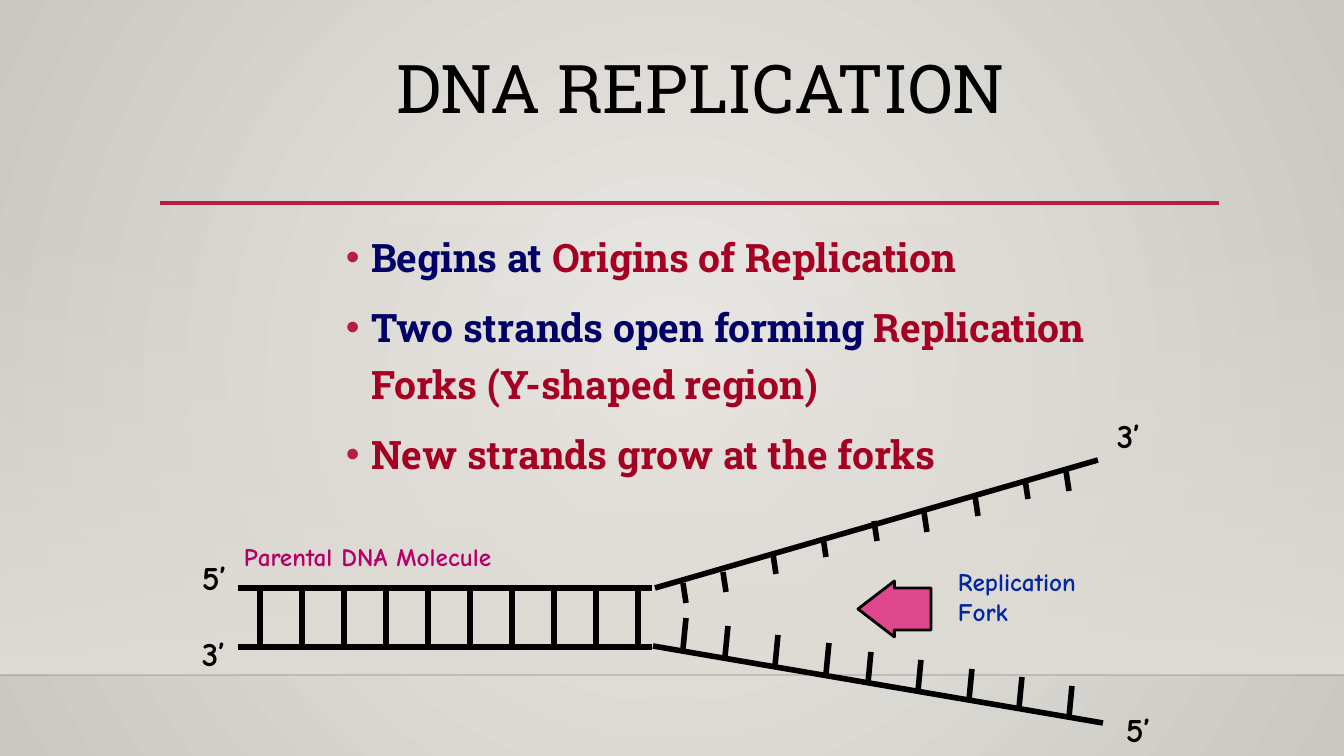
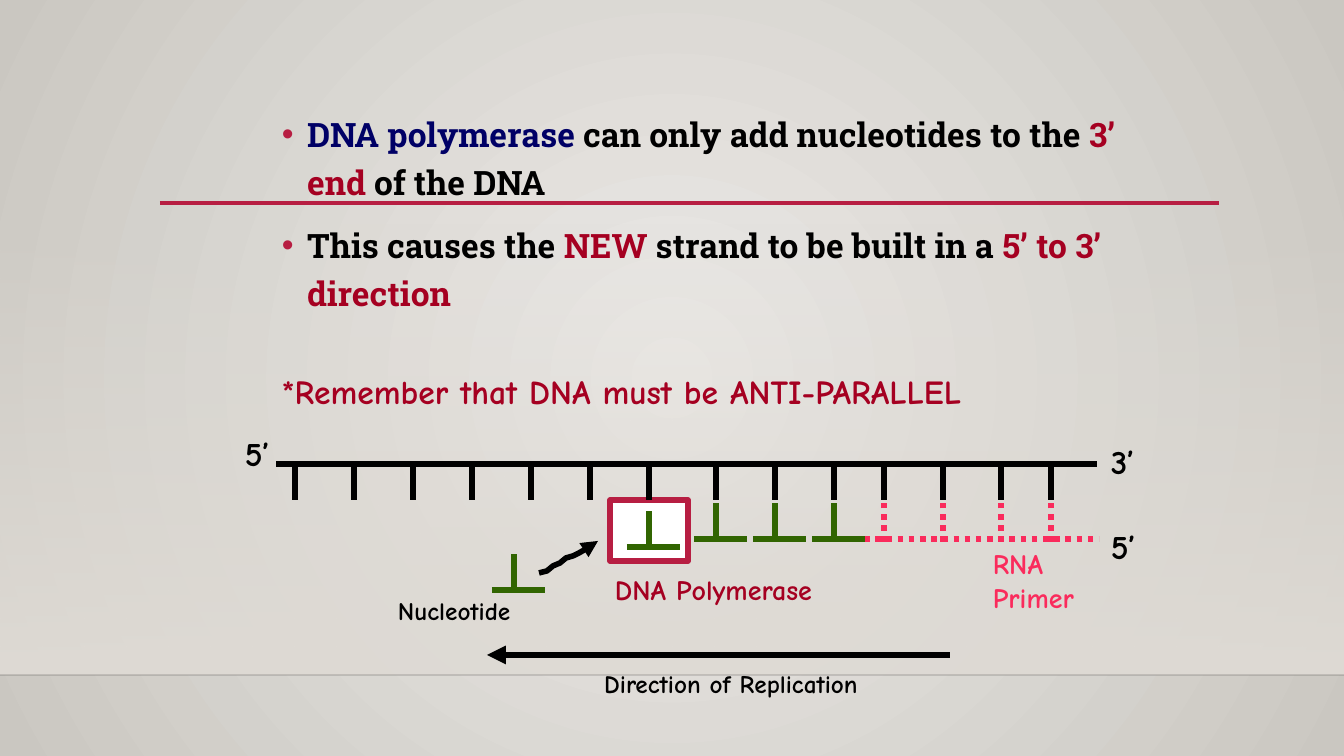
import pptx
import pptx.util
import pptx.oxml
import pptx.oxml.ns
import pptx.dml.color
import pptx.enum.dml
import pptx.enum.shapes
import pptx.enum.text
from lxml import etree

PX = 914400 / 100.8
WIDTH, HEIGHT = 1344, 756
SLAB, COMIC = "Roboto Slab", "Comic Neue"
COLORS = {
    "center": "ECEAE7", "edge": "CAC7C1", "floor": "DFDBD5", "horizon": "000001",
    "accent": "B71E42", "black": "000000", "white": "FFFFFF", "navy": "000066",
    "red": "A50021", "blue": "00279F", "magenta": "B50069", "pink": "DE478E",
    "primer": "FA2B5C", "green": "316501",
}
RGB = {name: pptx.dml.color.RGBColor.from_string(value) for name, value in COLORS.items()}
qn = pptx.oxml.ns.qn
Shape = pptx.enum.shapes.MSO_SHAPE
Align = pptx.enum.text.PP_ALIGN


def add_text(page, place, rows, box=None, font=COMIC, size=24, color="black", bold=True,
             wrap=False, bullet=False, before=0, spacing=1.0, align=Align.LEFT):
    place = [round(value * PX) for value in place]
    box = box or page.shapes.add_textbox(*place)
    box.left, box.top, box.width, box.height = place
    frame = box.text_frame
    frame.word_wrap = wrap
    frame.vertical_anchor = pptx.enum.text.MSO_ANCHOR.TOP
    for row in rows:
        first = not frame.text
        para = frame.paragraphs[0] if first else frame.add_paragraph()
        para.alignment = align
        para.line_spacing = spacing
        para.space_before = pptx.util.Pt(0 if first else before)
        if bullet:
            props = para._p.get_or_add_pPr()
            props.set("marL", "228600")
            props.set("indent", "-228600")
            tint = etree.SubElement(props, qn("a:buClr"))
            etree.SubElement(tint, qn("a:srgbClr"), val=COLORS["accent"])
            etree.SubElement(props, qn("a:buFont"), typeface="Arial")
            etree.SubElement(props, qn("a:buChar"), char="•")
        for text, tone in [(row, color)] if isinstance(row, str) else row:
            span = para.add_run()
            span.text = text
            span.font.name = font
            span.font.size = pptx.util.Pt(size)
            span.font.bold = bold
            span.font.color.rgb = RGB[tone]
    return box


def add_line(page, *points, color="black", width=4, dotted=False, arrow=False):
    if len(points) == 2:
        ends = [round(value * PX) for point in points for value in point]
        line = page.shapes.add_connector(pptx.enum.shapes.MSO_CONNECTOR.STRAIGHT, *ends)
    else:
        builder = page.shapes.build_freeform(*points[0], scale=PX)
        builder.add_line_segments(points[1:], close=False)
        line = builder.convert_to_shape()
        line.fill.background()
    line.line.color.rgb = RGB[color]
    line.line.width = pptx.util.Pt(width)
    if dotted:
        line.line.dash_style = pptx.enum.dml.MSO_LINE.ROUND_DOT
    props = line.element.spPr
    if arrow:
        etree.SubElement(props.find(qn("a:ln")), qn("a:tailEnd"), type="triangle")
    etree.SubElement(props, qn("a:effectLst"))
    return line


deck = pptx.Presentation()
deck.slide_width = round(WIDTH * PX)
deck.slide_height = round(HEIGHT * PX)
fork_page = deck.slides.add_slide(deck.slide_layouts[5])
strand_page = deck.slides.add_slide(deck.slide_layouts[6])

master = deck.slide_master
backdrop = master.background.fill
backdrop.gradient()
for stop, name in zip(backdrop.gradient_stops, ("center", "edge")):
    stop.color.rgb = RGB[name]
gradient = master.element.find(".//" + qn("a:gradFill"))
gradient.replace(gradient.find(qn("a:lin")), pptx.oxml.parse_xml(
    f'<a:path {pptx.oxml.ns.nsdecls("a")} path="circle">'
    '<a:fillToRect l="50000" t="50000" r="50000" b="50000"/></a:path>'))

floor = fork_page.shapes.add_shape(
    Shape.RECTANGLE, 0, round(223 * PX), deck.slide_width, round(452 * PX))
floor.shadow.inherit = False
floor.line.fill.background()
floor.fill.gradient()
floor.fill.gradient_angle = 270
for stop in floor.fill.gradient_stops:
    stop.color.rgb = RGB["floor"]
horizon = add_line(fork_page, (0, 675), (WIDTH, 675), color="horizon", width=1)
rule = add_line(fork_page, (160, 203), (1219, 203), color="accent", width=2.5)
for shape, opacity in ((floor, "0"), (horizon, "20000")):
    tint = shape.element.spPr.find(".//" + qn("a:srgbClr"))
    etree.SubElement(tint, qn("a:alpha"), val=opacity)
for number, shape in enumerate((floor, horizon, rule), 20):
    shape.element.find(".//" + qn("p:cNvPr")).set("id", str(number))
    master.shapes.element.append(shape.element)

add_text(fork_page, (386, 50, 714, 143), ["DNA REPLICATION"], box=fork_page.shapes.title,
         font=SLAB, size=48, bold=False, wrap=True, spacing=0.9)
add_text(fork_page, (336, 219, 789, 454), [
    [("Begins at ", "navy"), ("Origins of Replication", "red")],
    [("Two strands open forming ", "navy"), ("Replication Forks (Y-shaped region)", "red")],
    [("New strands grow at the forks", "red")],
], font=SLAB, size=28, wrap=True, bullet=True, before=10, spacing=1.2)

for y in (588, 647):
    add_line(fork_page, (238, y), (652, y))
for step in range(10):
    x = 260 + 42 * step
    add_line(fork_page, (x, 591), (x, 644))
add_line(fork_page, (655, 588), (1098, 460))
add_line(fork_page, (653, 646), (1103, 723))
upper_bases = [(683, 583), (723, 572), (773, 554), (823, 537), (874, 521),
               (924, 512), (975, 496), (1025, 479), (1066, 471)]
for x, y in upper_bases:
    add_line(fork_page, (x, y), (x + 3, y + 20))
for step, x in enumerate((683, 725, 775, 826, 868, 918, 969, 1019, 1069)):
    y = 649 + 17 * step // 2
    add_line(fork_page, (x, y), (x + 3, y - 31))

fork_arrow = fork_page.shapes.add_shape(
    Shape.LEFT_ARROW, *[round(value * PX) for value in (858, 581, 73, 56)])
fork_arrow.adjustments[0] = 0.75
fork_arrow.adjustments[1] = 0.65
fork_arrow.shadow.inherit = False
fork_arrow.fill.solid()
fork_arrow.fill.fore_color.rgb = RGB["pink"]
fork_arrow.line.color.rgb = RGB["black"]
fork_arrow.line.width = pptx.util.Pt(2)

body_place = (272, 101, 878, 646)
body = add_text(strand_page, body_place, [
    [("DNA polymerase", "navy"), (" can only add nucleotides to the ", "black"),
     ("3’ end", "red"), (" of the DNA", "black")],
    [("This causes the ", "black"), ("NEW", "red"),
     (" strand to be built in a ", "black"), ("5’ to 3’ direction", "red")],
], font=SLAB, wrap=True, bullet=True, before=10, spacing=1.2)
add_text(strand_page, body_place, ["*Remember that DNA must be ANTI-PARALLEL"], box=body,
         color="red", wrap=True, before=35, spacing=1.2)

polymerase = strand_page.shapes.add_shape(
    Shape.RECTANGLE, *[round(value * PX) for value in (610, 500, 78, 61)])
polymerase.shadow.inherit = False
polymerase.fill.solid()
polymerase.fill.fore_color.rgb = RGB["white"]
polymerase.line.color.rgb = RGB["accent"]
polymerase.line.width = pptx.util.Pt(4)

open_bases = [295 + 59 * step for step in range(6)]
active_base = 649
paired_bases = [716, 775, 834]
primer_bases = [884, 943, 1001, 1051]
add_line(strand_page, (1097, 464), (276, 464))
for x in open_bases + paired_bases + primer_bases:
    add_line(strand_page, (x, 500), (x, 461))
active_line = add_line(strand_page, (active_base, 500), (active_base, 461))
active_line.begin_connect(polymerase, 0)

add_line(strand_page, (864, 539), (1099, 539), color="primer", dotted=True)
for x in primer_bases:
    add_line(strand_page, (x, 542), (x, 503), color="primer", dotted=True)
for x, y in [(x, 539) for x in paired_bases] + [(active_base, 547), (514, 590)]:
    add_line(strand_page, (x, y + 3), (x, y - 36), color="green")
    add_line(strand_page, (x - 22, y), (x + 31, y), color="green")
add_line(strand_page, (539, 573), (547, 571), (553, 566), (560, 563), (566, 558),
         (573, 556), (579, 553), (586, 549), (592, 545), (598, 541), arrow=True)
add_line(strand_page, (950, 655), (487, 655), width=4.5, arrow=True)

labels = [
    (fork_page, (948, 561, 151, 71), ["Replication", "Fork"], 18, "blue"),
    (fork_page, (234, 536, 304, 40), ["Parental DNA Molecule"], 18, "magenta"),
    (fork_page, (1107, 410, 48, 50), ["3’"], 24, "black"),
    (fork_page, (192, 552, 48, 50), ["5’"], 24, "black"),
    (fork_page, (192, 628, 48, 50), ["3’"], 24, "black"),
    (fork_page, (1116, 704, 48, 50), ["5’"], 24, "black"),
    (strand_page, (983, 542, 108, 78), ["RNA", "Primer"], 20, "primer"),
    (strand_page, (605, 568, 246, 43), ["DNA Polymerase"], 20, "red"),
    (strand_page, (388, 590, 150, 40), ["Nucleotide"], 18, "black"),
    (strand_page, (1101, 521, 48, 50), ["5’"], 24, "black"),
    (strand_page, (235, 428, 48, 50), ["5’"], 24, "black"),
    (strand_page, (1101, 436, 48, 50), ["3’"], 24, "black"),
]
for page, place, rows, size, color in labels:
    add_text(page, place, rows, size=size, color=color)
add_text(strand_page, (445, 663, 572, 40), ["Direction of Replication"],
         size=18, wrap=True, align=Align.CENTER)

deck.save("out.pptx")
